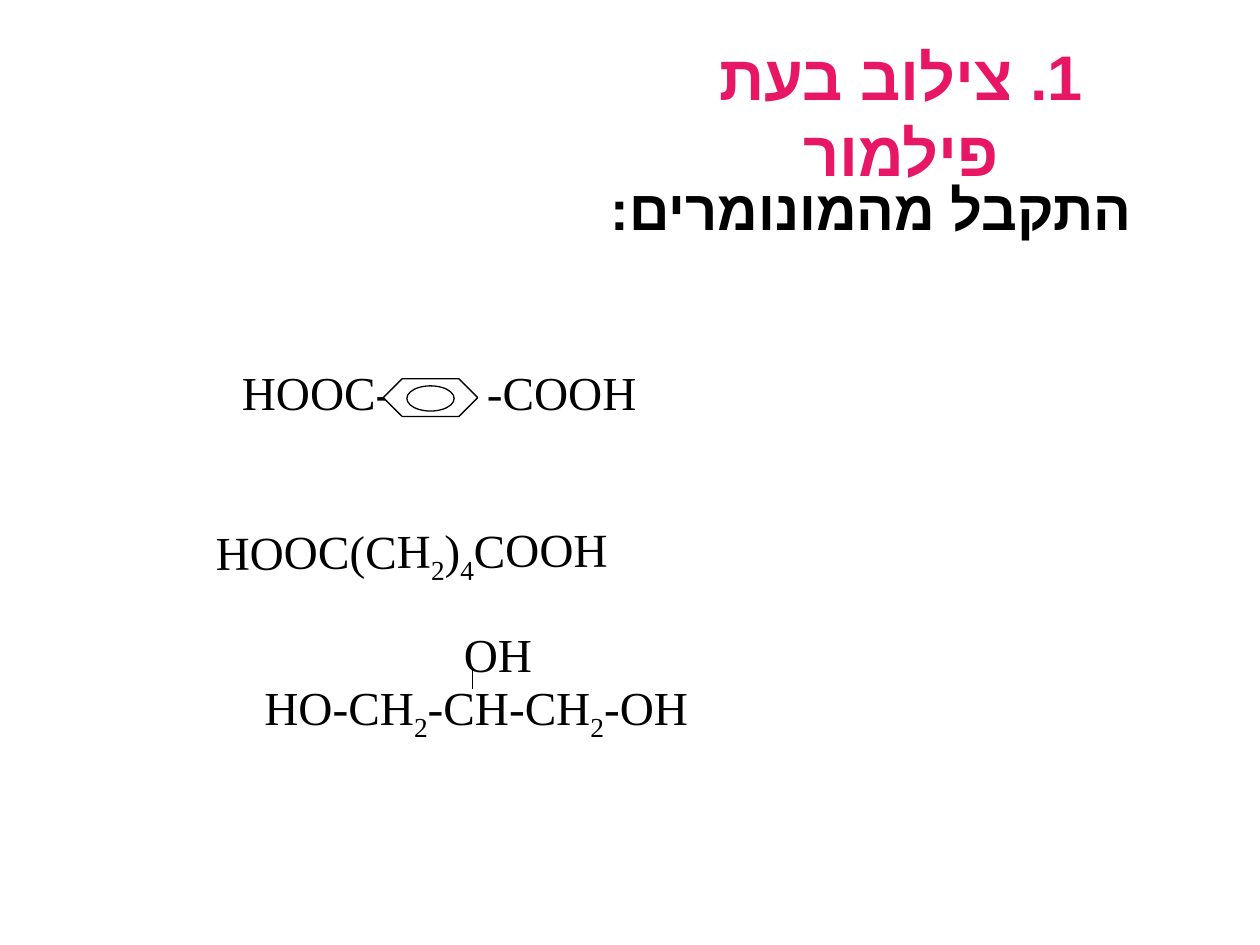
from pptx import Presentation
from pptx import util as u
from pptx.dml.color import RGBColor
from pptx.enum import shapes, text
from pptx.oxml.ns import qn

BLACK = RGBColor(0, 0, 0)
WHITE = RGBColor(255, 255, 255)
PINK = RGBColor(0xE8, 0x17, 0x66)

HEADINGS = [
    dict(words="1. צילוב בעת פילמור", box=(372, 18, 286, 42), color=PINK,
         align=text.PP_ALIGN.CENTER, font=dict(name="Arial", size=u.Pt(36), bold=True)),
    dict(words="התקבל מהמונומרים:", box=(36, 96, 618, 45), color=BLACK,
         align=text.PP_ALIGN.RIGHT, font=dict(name="Times New Roman", size=u.Pt(32), bold=True)),
]
FORMULA_FONT = dict(name="Times New Roman", size=u.Pt(27), bold=False)
BOND = (270, 383, 270, 394)
FORMULAS = [
    dict(parts=["HO-CH", "2", "-CH-CH", "2", "-OH"], box=(144, 384, 270, 39.6)),
    dict(parts=["OH"], box=(258, 354, 66, 39.6)),
    dict(parts=["HOOC-\t-COOH"], box=(30, 204, 528, 39.6), indent=101, tab=140),
    dict(parts=["HOOC(CH", "2", ")", "4", "COOH"], box=(96, 294, 382, 39.6),
         indent=20, rotation=359.5),
]
RING = [
    (shapes.MSO_SHAPE.HEXAGON, (219, 216.5, 54, 21.5)),
    (shapes.MSO_SHAPE.OVAL, (232.5, 220.5, 27, 14.4)),
]


def points(values):
    return [u.Pt(value) for value in values]


def apply(target, values):
    for name, value in values.items():
        setattr(target, name, value)


def fill_heading(shape, heading):
    apply(shape, dict(zip(("left", "top", "width", "height"), points(heading["box"]))))
    apply(shape.text_frame, dict(word_wrap=True, auto_size=text.MSO_AUTO_SIZE.NONE,
                                 vertical_anchor=text.MSO_ANCHOR.TOP))
    paragraph = shape.text_frame.paragraphs[0]
    apply(paragraph, dict(alignment=heading["align"], space_before=u.Pt(0)))
    properties = paragraph._p.get_or_add_pPr()
    for name, value in dict(marL="0", indent="0", rtl="1").items():
        properties.set(name, value)
    properties.append(properties.makeelement(qn("a:buNone"), {}))
    run = paragraph.add_run()
    run.text = heading["words"]
    apply(run.font, heading["font"])
    run.font.color.rgb = heading["color"]
    run_properties = run._r.get_or_add_rPr()
    run_properties.append(run_properties.makeelement(qn("a:cs"), {"typeface": "Arial"}))


def add_formula(slide, parts, box, indent=0, tab=None, rotation=0):
    shape = slide.shapes.add_textbox(*points(box))
    shape.rotation = rotation
    apply(shape.text_frame, dict(word_wrap=True, margin_left=u.Pt(7.2 + indent)))
    paragraph = shape.text_frame.paragraphs[0]
    if tab:
        properties = paragraph._p.get_or_add_pPr()
        tabs = properties.makeelement(qn("a:tabLst"), {})
        tabs.append(tabs.makeelement(qn("a:tab"), {"pos": str(u.Pt(tab)), "algn": "l"}))
        properties.append(tabs)
    for part in parts:
        run = paragraph.add_run()
        run.text = part
        apply(run.font, FORMULA_FONT)
        run.font.color.rgb = BLACK
        if part.isdigit():
            run.font._element.set("baseline", "-25000")


def add_bond(slide):
    bond = slide.shapes.add_connector(shapes.MSO_CONNECTOR.STRAIGHT, *points(BOND))
    bond.line.color.rgb = BLACK
    bond.line.width = u.Pt(0.75)
    properties = bond._element.spPr
    properties.append(properties.makeelement(qn("a:effectLst"), {}))


def add_ring(slide):
    for kind, box in RING:
        shape = slide.shapes.add_shape(kind, *points(box))
        shape.shadow.inherit = False
        shape.fill.solid()
        shape.fill.fore_color.rgb = WHITE
        shape.line.color.rgb = BLACK
        shape.line.width = u.Pt(0.75)
        if kind == shapes.MSO_SHAPE.HEXAGON:
            shape.adjustments[0] = 0.5


def main():
    presentation = Presentation()
    apply(presentation, dict(slide_width=u.Pt(720), slide_height=u.Pt(540)))
    slide = presentation.slides.add_slide(presentation.slide_layouts[1])
    for shape, heading in zip(slide.placeholders, HEADINGS):
        fill_heading(shape, heading)
    add_bond(slide)
    for formula in FORMULAS:
        add_formula(slide, **formula)
    add_ring(slide)
    presentation.save("out.pptx")


if __name__ == "__main__":
    main()
